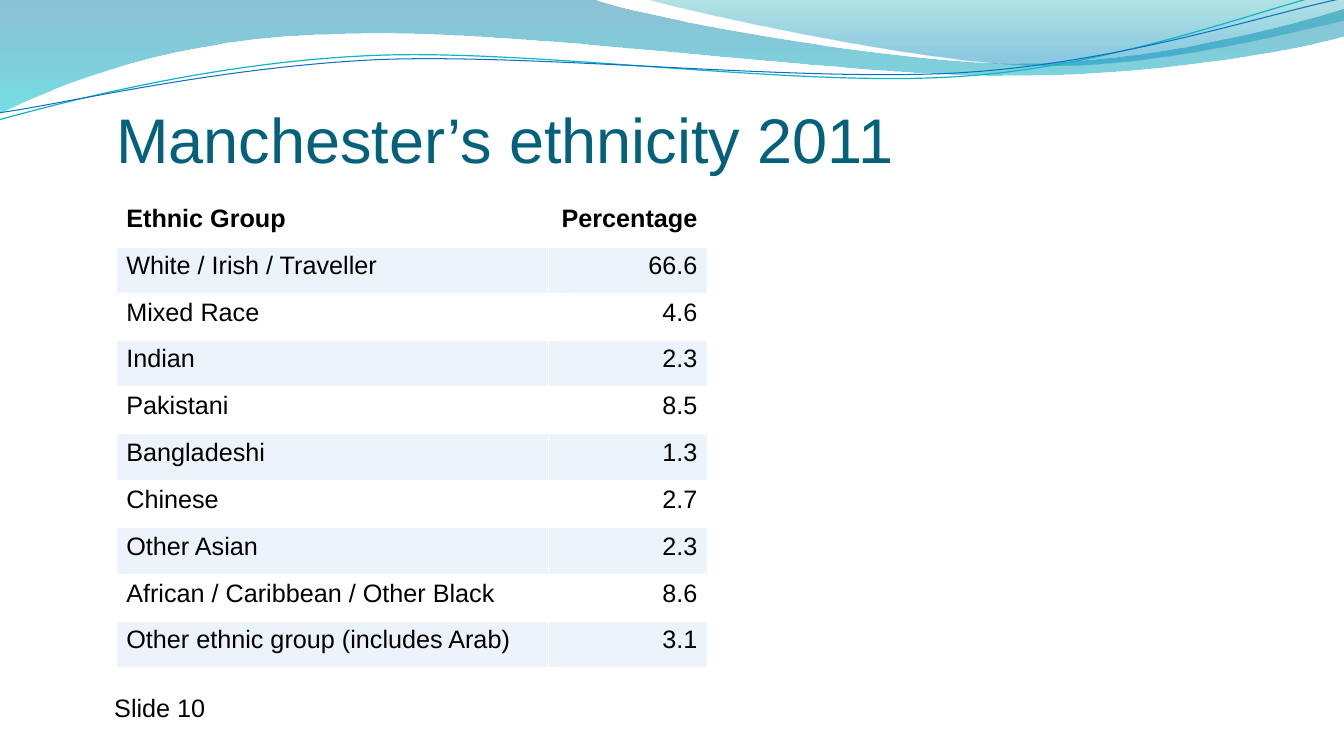
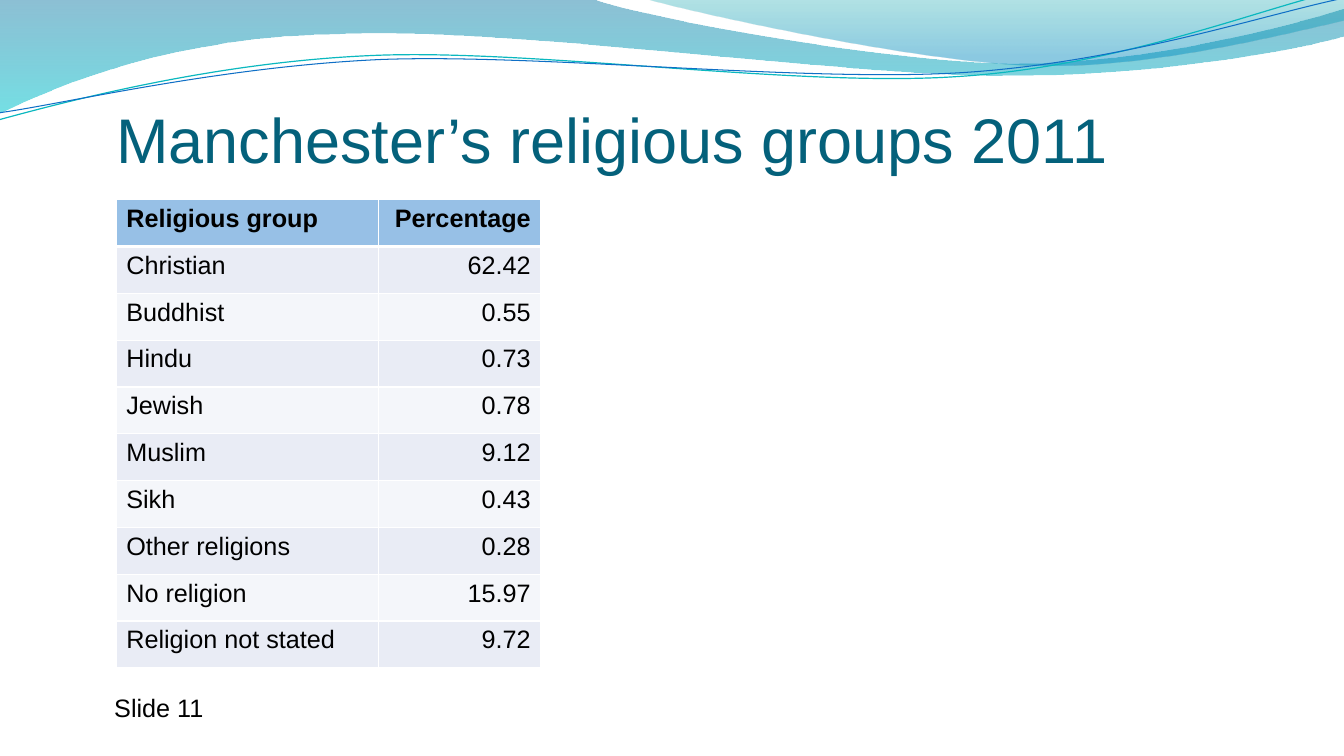
from lxml.etree import SubElement
from pptx import Presentation
from pptx.dml.color import RGBColor
from pptx.enum.text import MSO_ANCHOR, MSO_AUTO_SIZE, PP_ALIGN
from pptx.oxml.ns import qn
from pptx.util import Cm, Pt

FACE = "Arial"
BLACK, WHITE = "000000", "FFFFFF"
TITLE, BLUE, TEAL = "04617B", "0F6FC6", "0AB8BF"
PALE, LIGHT = "CCD5EA", "E7EBF5"

BAND = [(0, 0), (14.91, -0.03), (16.1, 0.43, 22.48, 1.6, 25.68, 1.6),
        (28.91, 1.6, 32.46, 0.66, 33.86, 0.23), (33.91, 0.91),
        (33.3, 1.12, 29.46, 1.93, 25.25, 1.91),
        (21.06, 1.91, 12.93, 0.71, 8.71, 0.86),
        (4.37, 0.91, 1.55, 2.11, -0.03, 2.87), (0, 0)]
SHEEN = [(16.23, -0.03), (17.25, 0.28, 23.09, 1.57, 26.04, 1.65),
         (28.98, 1.75, 32.56, 0.81, 33.86, 0.53), (33.86, 0), (16.23, -0.03)]
UPPER = [(-0.03, 3.02), (1.63, 2.57, 5.36, 1.57, 9.37, 1.4),
         (13.36, 1.22, 20.07, 2.21, 24.13, 1.93),
         (28.19, 1.68, 31.8, 0.2, 33.81, -0.25)]
LOWER = [(0, 2.84), (1.6, 2.62, 5.54, 1.68, 9.6, 1.5),
         (13.64, 1.35, 20.22, 2.08, 24.26, 1.83),
         (28.32, 1.57, 31.88, 0.36, 33.88, -0.05)]

GROUPS = [("Ethnic Group", "Percentage"), ("White / Irish / Traveller", "66.6"),
          ("Mixed Race", "4.6"), ("Indian", "2.3"), ("Pakistani", "8.5"),
          ("Bangladeshi", "1.3"), ("Chinese", "2.7"), ("Other Asian", "2.3"),
          ("African / Caribbean / Other Black", "8.6"),
          ("Other ethnic group (includes Arab)", "3.1")]
FAITHS = [("Religious group", "Percentage"), ("Christian", "62.42"),
          ("Buddhist", "0.55"), ("Hindu", "0.73"), ("Jewish", "0.78"),
          ("Muslim", "9.12"), ("Sikh", "0.43"), ("Other religions", "0.28"),
          ("No religion", "15.97"), ("Religion not stated", "9.72")]


def paint(color, code):
    color.rgb = RGBColor.from_string(code)


def fade(color, share):
    SubElement(color, qn("a:alpha"), val=str(share * 1000))


def style(para, size, code, bold=False):
    font = para.font
    font.name, font.size, font.bold = FACE, Pt(size), bold
    paint(font.color, code)


def bend(shape, parts):
    lines = iter(list(shape.element.iter(qn("a:lnTo"))))
    for part in parts:
        line = next(lines)
        if len(part) == 6:
            line.addprevious(curve := line.makeelement(qn("a:cubicBezTo")))
            for old in (line, next(lines), next(lines)):
                curve.append(old[0])
                old.getparent().remove(old)


def draw(slide, route, close):
    points = [(part[i] * 100, part[i + 1] * 100)
              for part in route for i in range(0, len(part), 2)]
    pen = slide.shapes.build_freeform(*points[0], scale=Cm(0.01))
    pen.add_line_segments(points[1:], close=close)
    shape = pen.convert_to_shape()
    shape.shadow.inherit = False
    bend(shape, route[1:])
    return shape


def add_wave(slide, route, stops):
    shape = draw(slide, route, True)
    shape.line.fill.background()
    shape.fill.gradient()
    shape.fill.gradient_angle = 270
    for stop, (place, code, share) in zip(shape.fill.gradient_stops, stops):
        stop.position = place
        paint(stop.color, code)
    colors = list(shape.element.spPr.iter(qn("a:srgbClr")))
    for color, (place, code, share) in zip(colors, stops):
        fade(color, share)
    return shape


def add_curve(slide, route, code, width):
    shape = draw(slide, route, False)
    shape.fill.background()
    paint(shape.line.color, code)
    shape.line.width = Pt(width)
    return shape


def add_top(slide, layout):
    for holder in list(layout.placeholders):
        layout.shapes.element.remove(holder.element)
    parts = [add_wave(slide, BAND, [(0, "0074A1", 45), (1, "00C6CF", 55)]),
             add_wave(slide, SHEEN, [(0, "00A1A9", 30), (0.8, "008BBF", 45)]),
             add_curve(slide, UPPER, TEAL, 0.85),
             add_curve(slide, LOWER, BLUE, 0.75)]
    for part in parts:
        layout.shapes.element.append(part.element)


def add_text(slide, box, text, size, code):
    frame = slide.shapes.add_textbox(*map(Cm, box)).text_frame
    frame.word_wrap = True
    frame.text = text
    style(frame.paragraphs[0], size, code)
    return frame


def add_title(slide, box, text):
    frame = add_text(slide, box, text, 45, TITLE)
    frame.vertical_anchor = MSO_ANCHOR.BOTTOM
    frame.margin_left = frame.margin_right = frame.margin_bottom = 0


def add_foot(slide, box, number):
    frame = add_text(slide, box, f"Slide {number}", 18, BLACK)
    frame.auto_size = MSO_AUTO_SIZE.SHAPE_TO_FIT_TEXT


def edge(cell, row):
    props = cell._tc.get_or_add_tcPr()
    widths = {"L": 1, "R": 1, "T": 3 if row == 1 else 1, "B": 1 if row else 3}
    for side, width in widths.items():
        line = SubElement(props, qn("a:ln" + side), w=str(Pt(width)))
        SubElement(SubElement(line, qn("a:solidFill")), qn("a:srgbClr"), val=WHITE)


def add_grid(slide, box, widths, rows, fills):
    left, top, height = box
    frame = slide.shapes.add_table(len(rows), len(widths), Cm(left), Cm(top),
                                   Cm(sum(widths)), Cm(height))
    table = frame.table
    table.first_row = table.horz_banding = False
    for column, width in zip(table.columns, widths):
        column.width = Cm(width)
    head, odd, even = fills
    for i, texts in enumerate(rows):
        tint = head if i == 0 else odd if i % 2 else even
        for j, text in enumerate(texts):
            cell = table.cell(i, j)
            cell.text = text
            para = cell.text_frame.paragraphs[0]
            style(para, 18, BLACK, i == 0)
            if j:
                para.alignment = PP_ALIGN.RIGHT
            edge(cell, i)
            if tint is None:
                cell.fill.background()
                continue
            code, share = tint
            cell.fill.solid()
            paint(cell.fill.fore_color, code)
            props = cell._tc.tcPr
            fade(props.find(qn("a:solidFill")).find(qn("a:srgbClr")), share)


def add_page(slide, title, number, widths, rows, fills):
    add_title(slide, (2.93, 2.24, 30.48, 2.21), title)
    add_grid(slide, (2.93, 5.03, 11.8), widths, rows, fills)
    add_foot(slide, (2.63, 17.32, 3, 1.02), number)


def main():
    deck = Presentation()
    deck.slide_width, deck.slide_height = Cm(33.87), Cm(19.05)
    blank = deck.slide_layouts[6]
    first, second = (deck.slides.add_slide(blank) for _ in range(2))
    add_top(first, blank)
    add_page(first, "Manchester’s ethnicity 2011", 10, (10.9, 4), GROUPS,
             (None, (BLUE, 8), None))
    add_page(second, "Manchester’s religious groups 2011", 11, (6.6, 4.1), FAITHS,
             ((BLUE, 43), (PALE, 43), (LIGHT, 43)))
    deck.save("out.pptx")


if __name__ == "__main__":
    main()
